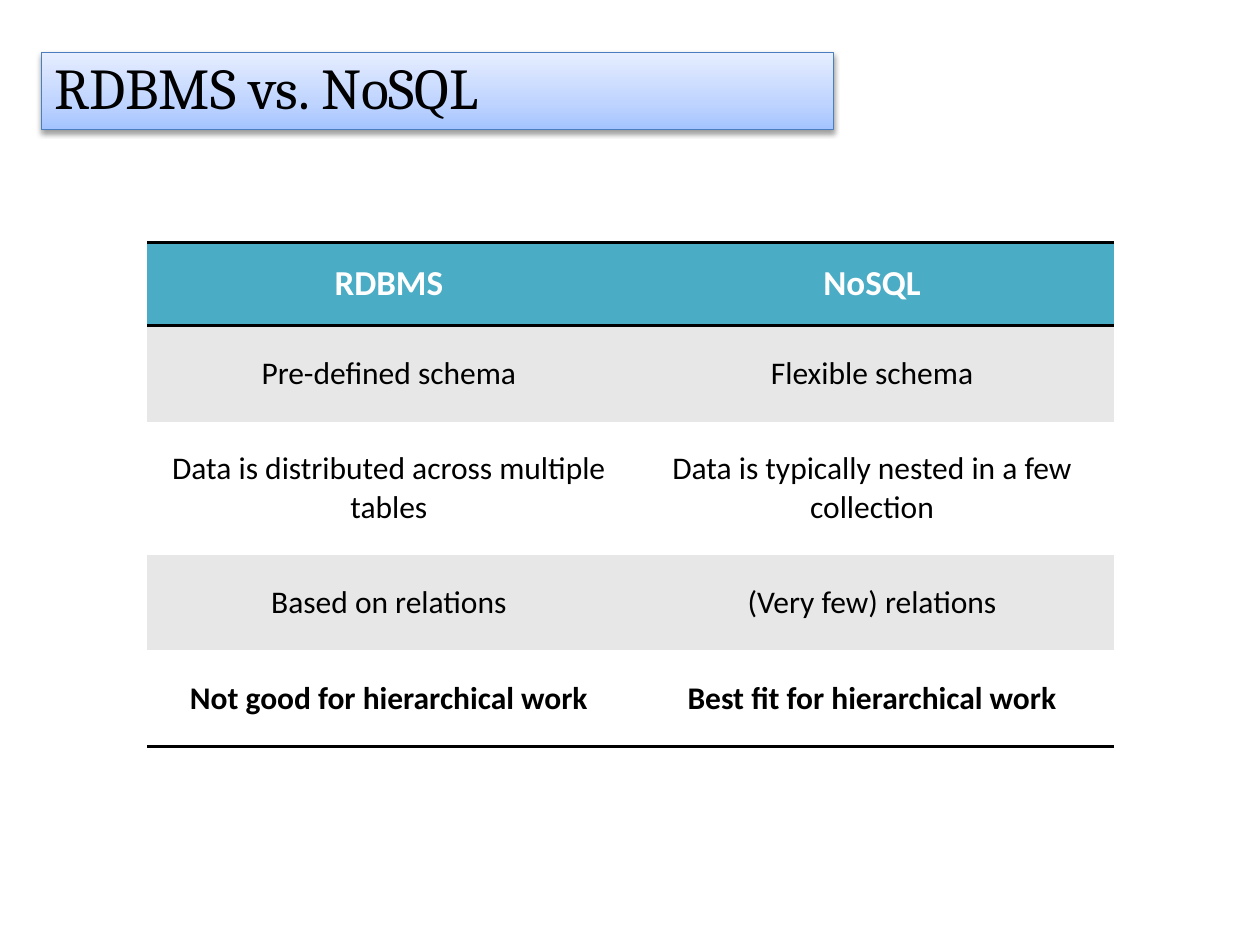
from lxml import etree
from pptx import Presentation
from pptx.dml.color import RGBColor
from pptx.enum.shapes import MSO_SHAPE
from pptx.enum.text import MSO_ANCHOR, PP_ALIGN
from pptx.oxml.ns import qn
from pptx.util import Cm, Pt

RECTANGLE = MSO_SHAPE.RECTANGLE
MIDDLE = MSO_ANCHOR.MIDDLE
LEFT, CENTER = PP_ALIGN.LEFT, PP_ALIGN.CENTER

TITLE = "RDBMS vs. NoSQL"
ROWS = [
    ("RDBMS", "NoSQL"),
    ("Pre-defined schema", "Flexible schema"),
    ("Data is distributed across multiple tables",
     "Data is typically nested in a few collection"),
    ("Based on relations", "(Very few) relations"),
    ("Not good for hierarchical work", "Best fit for hierarchical work"),
]
ROW_HEIGHTS = [1.69, 1.93, 2.68, 1.93, 1.93]
TITLE_BOX = (0.84, 1.06, 15.96, 1.55)
TABLE_BOX = (2.97, 4.88, 19.48, sum(ROW_HEIGHTS))

THEME = {
    "title": {"name": "Cambria", "size": Pt(33), "color": "000000"},
    "header": {"name": "Calibri", "size": Pt(20), "bold": True, "color": "FFFFFF"},
    "body": {"name": "Calibri", "size": Pt(18), "bold": False, "color": "000000"},
    "closing": {"name": "Calibri", "size": Pt(18), "bold": True, "color": "000000"},
    "header_fill": "4BACC6",
    "bands": ("FFFFFF", "E7E7E7"),
    "rule": "000000",
    "rule_width": Pt(2),
    "outline": "4B7EBC",
    "outline_width": Pt(0.75),
    "gradient": [(0, "A4C4FF"), (35, "BFD4FF"), (100, "E6EEFF")],
    "shadow": {"blurRad": Pt(3.1), "dist": Pt(1.6), "dir": 90 * 60000, "rotWithShape": 0},
    "shadow_color": "000000",
    "shadow_opacity": 38,
}
PLAIN_TABLE_STYLE = "{2D5ABB26-0587-4C30-8999-92F81FD0307C}"


def add_node(parent, tag, **values):
    return etree.SubElement(parent, qn(tag), {key: str(value) for key, value in values.items()})


def write_text(frame, text, style, alignment, line_spacing=None):
    para = frame.paragraphs[0]
    para.alignment = alignment
    para.line_spacing = line_spacing
    span = para.add_run()
    span.text = text
    for key, value in style.items():
        if key == "color":
            span.font.color.rgb = RGBColor.from_string(value)
        else:
            setattr(span.font, key, value)


def add_title(page):
    box = page.shapes.add_shape(RECTANGLE, *map(Cm, TITLE_BOX))
    box.line.color.rgb = RGBColor.from_string(THEME["outline"])
    box.line.width = THEME["outline_width"]
    box.fill.gradient()
    box.fill.gradient_angle = 90
    properties = box._element.spPr
    stops = properties.find(".//" + qn("a:gsLst"))
    for stop in list(stops):
        stops.remove(stop)
    for position, color in THEME["gradient"]:
        add_node(add_node(stops, "a:gs", pos=position * 1000), "a:srgbClr", val=color)
    box.shadow.inherit = False
    effects = properties.find(qn("a:effectLst"))
    shadow = add_node(effects, "a:outerShdw", **THEME["shadow"])
    color = add_node(shadow, "a:srgbClr", val=THEME["shadow_color"])
    add_node(color, "a:alpha", val=THEME["shadow_opacity"] * 1000)
    box.text_frame.word_wrap = True
    box.text_frame.vertical_anchor = MIDDLE
    write_text(box.text_frame, TITLE, THEME["title"], LEFT, 0.9)


def add_rules(cell, tags):
    properties = cell._tc.get_or_add_tcPr()
    for index, tag in enumerate(tags):
        line = add_node(properties, tag, w=THEME["rule_width"])
        add_node(add_node(line, "a:solidFill"), "a:srgbClr", val=THEME["rule"])
        properties.insert(index, line)


def add_comparison(page):
    frame = page.shapes.add_table(len(ROWS), len(ROWS[0]), *map(Cm, TABLE_BOX))
    table = frame.table
    table._tbl.tblPr.find(qn("a:tableStyleId")).text = PLAIN_TABLE_STYLE
    last = len(ROWS) - 1
    styles = {0: "header", last: "closing"}
    rules = {0: ("a:lnT", "a:lnB"), last: ("a:lnB",)}
    for index, (texts, height) in enumerate(zip(ROWS, ROW_HEIGHTS)):
        table.rows[index].height = Cm(height)
        fill = THEME["bands"][index % 2] if index else THEME["header_fill"]
        for column, text in enumerate(texts):
            cell = table.cell(index, column)
            cell.vertical_anchor = MIDDLE
            cell.fill.solid()
            cell.fill.fore_color.rgb = RGBColor.from_string(fill)
            write_text(cell.text_frame, text, THEME[styles.get(index, "body")], CENTER)
            add_rules(cell, rules.get(index, ()))


def main():
    deck = Presentation()
    deck.slide_width, deck.slide_height = Cm(25.4), Cm(19.05)
    page = deck.slides.add_slide(deck.slide_layouts[6])
    add_comparison(page)
    add_title(page)
    deck.save("out.pptx")


if __name__ == "__main__":
    main()
